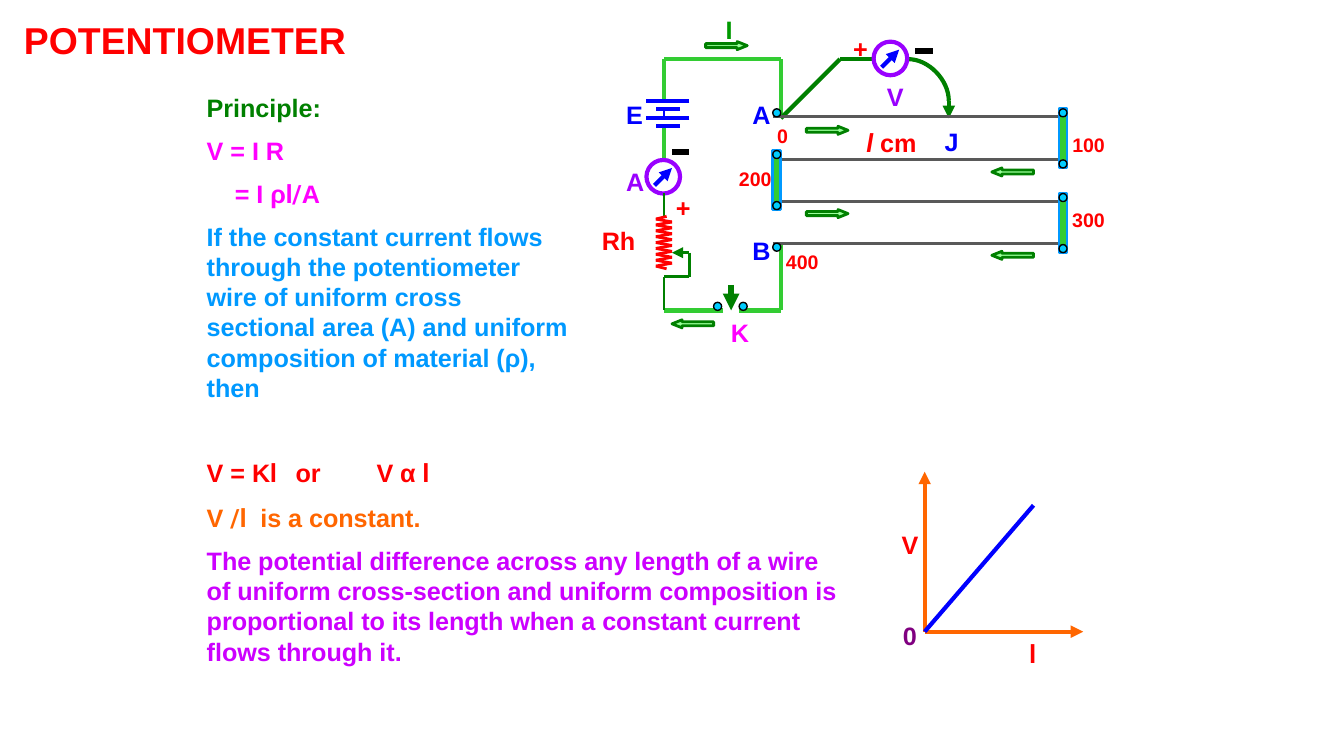
from itertools import pairwise

from lxml.etree import SubElement as Sub
from pptx import Presentation
from pptx.dml.color import RGBColor
from pptx.enum.shapes import MSO_CONNECTOR as Link, MSO_SHAPE as Geo
from pptx.enum.text import MSO_AUTO_SIZE as Fit
from pptx.oxml.ns import qn
from pptx.util import Cm, Pt

INCH = 2.54
GREEN, DARK, RED, BLUE = "33CC33", "008000", "FF0000", "0000FF"
PURPLE, PINK, SKY, ORANGE, BLACK = "9900FF", "FF00FF", "0099FF", "FF6600", "000000"
ARIAL, ROBOTO = "Arial", "Roboto"


def span(*nums):
    return [Cm(num * INCH) for num in nums]


def tint(code):
    return RGBColor.from_string(code)


def line(slide, start, end, hue, width=2.25, arrow=False, curve=False):
    kind = Link.CURVE if curve else Link.STRAIGHT
    wire = slide.shapes.add_connector(kind, *span(*start, *end))
    wire.line.color.rgb = tint(hue)
    wire.line.width = Pt(width)
    props = wire._element.spPr
    if curve:
        props.find(qn("a:prstGeom")).set("prst", "curvedConnector2")
    if arrow:
        Sub(props.find(qn("a:ln")), qn("a:tailEnd"), type="triangle")
    Sub(props, qn("a:effectLst"))


def chain(slide, points, hue, width=2.25):
    for start, end in pairwise(points):
        line(slide, start, end, hue, width)


def shape(slide, geo, box, fill, edge, width):
    item = slide.shapes.add_shape(geo, *span(*box))
    item.shadow.inherit = False
    item.fill.solid()
    item.fill.fore_color.rgb = tint(fill)
    item.line.color.rgb = tint(edge)
    item.line.width = Pt(width)
    return item


def flow(slide, x, y, geo=Geo.RIGHT_ARROW):
    item = shape(slide, geo, (x, y, 0.31, 0.06), "99FF99", DARK, 1.5)
    item.adjustments[0] = 0.5
    item.adjustments[1] = 1.25


def dot(slide, x, y):
    shape(slide, Geo.OVAL, (x, y, 0.06, 0.06), "00CCFF", BLACK, 0.75)


def meter(slide, x, y):
    shape(slide, Geo.OVAL, (x, y, 0.25, 0.25), "FFFFFF", PURPLE, 2.25)
    line(slide, (x + 0.06, y + 0.19), (x + 0.19, y + 0.06), BLUE, arrow=True)


def frame(slide, box, wrap=True):
    body = slide.shapes.add_textbox(*span(*box)).text_frame
    body.word_wrap = wrap
    body.auto_size = Fit.SHAPE_TO_FIT_TEXT
    return body


def write(body, hue, runs, size=13.5, gap=6.75, left=0, tabs=()):
    para = body.paragraphs[0]
    if para.runs:
        para = body.add_paragraph()
        para.space_before = Pt(gap)
    props = para._p.get_or_add_pPr()
    if left:
        props.set("marL", str(Cm(left)))
    if tabs:
        stops = Sub(props, qn("a:tabLst"))
        for stop in tabs:
            Sub(stops, qn("a:tab"), pos=str(Cm(stop)), algn="l")
    for text, face, *slant in runs:
        run = para.add_run()
        run.text = text
        font = run.font
        font.name, font.size, font.bold = face, Pt(size), True
        font.color.rgb = tint(hue)
        if slant:
            font.italic = True


def label(slide, text, x, y, width, hue, size=13.5, face=ARIAL, wrap=True):
    height = 0.33 if size > 12 else 0.28
    write(frame(slide, (x, y, width, height), wrap), hue, [(text, face)], size)


def supply(slide):
    chain(slide, [(5.81, 0.88), (5.81, 0.44), (4.94, 0.44), (4.94, 0.75)], GREEN)
    line(slide, (4.94, 1.19), (4.94, 0.94), GREEN)
    line(slide, (5.38, 2.31), (4.94, 2.31), GREEN)
    chain(slide, [(5.81, 1.81), (5.81, 2.31), (5.5, 2.31)], GREEN)
    flow(slide, 5.25, 0.31)
    flow(slide, 5, 2.38, Geo.LEFT_ARROW)
    label(slide, "I", 5.3, 0.06, 0.25, "009900", wrap=False)

    for y in (0.75, 0.88):
        line(slide, (5.13, y), (4.81, y), BLUE)
        line(slide, (5.06, y + 0.06), (4.88, y + 0.06), BLUE)
    line(slide, (4.94, 0.81), (4.94, 0.88), BLUE, 1.5)
    label(slide, "E", 4.56, 0.69, 0.33, BLUE)

    meter(slide, 4.81, 1.19)
    label(slide, "A", 4.56, 1.19, 0.31, PURPLE)
    line(slide, (5, 1.13), (5.13, 1.13), BLACK, 3)
    label(slide, "+", 4.93, 1.38, 0.31, RED, wrap=False)

    line(slide, (4.94, 1.44), (4.94, 1.62), DARK, 1.5)
    step = (1.98 - 1.63) / 16
    coil = [(5 if turn % 2 else 4.88, 1.63 + turn * step) for turn in range(17)]
    chain(slide, [(4.96, 1.61), *coil, (4.96, 2)], RED, 1.5)
    line(slide, (5.13, 1.88), (5, 1.88), DARK, 1.5, arrow=True)
    chain(slide, [(5.13, 1.88), (5.13, 2.06), (4.94, 2.06), (4.94, 2.31)], DARK, 1.5)
    label(slide, "Rh", 4.38, 1.63, 0.56, RED)

    line(slide, (5.44, 2.12), (5.44, 2.31), DARK, 3, arrow=True)
    for x in (5.31, 5.5):
        dot(slide, x, 2.25)
    label(slide, "K", 5.34, 2.31, 0.34, PINK, wrap=False)


def probe(slide):
    chain(slide, [(5.81, 0.88), (6.25, 0.44), (6.5, 0.44)], DARK)
    line(slide, (6.76, 0.44), (7.06, 0.75), DARK, curve=True)
    line(slide, (7.06, 0.75), (7.06, 0.88), DARK, arrow=True)
    meter(slide, 6.5, 0.31)
    label(slide, "V", 6.5, 0.56, 0.31, PURPLE)
    label(slide, "+", 6.25, 0.2, 0.25, RED)
    line(slide, (6.81, 0.38), (6.94, 0.38), BLACK, 3)
    label(slide, "J", 6.93, 0.89, 0.31, BLUE, wrap=False)
    body = frame(slide, (6.35, 0.9, 0.58, 0.33), False)
    write(body, RED, [("l", ROBOTO, True), (" cm", ARIAL)])


def wires(slide):
    for y in (0.87, 1.19, 1.5, 1.81):
        line(slide, (5.75, y), (7.94, y), "595959", 1.5)
    for x, y in ((7.88, 0.81), (7.88, 1.44), (5.75, 1.12)):
        shape(slide, Geo.RECTANGLE, (x, y, 0.06, 0.44), GREEN, SKY, 1.5)
        dot(slide, x, y)
        dot(slide, x, y + 0.38)
    for y in (0.81, 1.81):
        dot(slide, 5.75, y)
    for y in (0.94, 1.56):
        flow(slide, 6, y)
        flow(slide, 7.38, y + 0.31, Geo.LEFT_ARROW)
    for text, y in (("A", 0.69), ("B", 1.7)):
        label(slide, text, 5.5, y, 0.34, BLUE, wrap=False)
    for text, x, y, width in (
        ("0", 5.69, 0.87, 0.19), ("100", 7.88, 0.94, 0.55), ("200", 5.4, 1.19, 0.48),
        ("300", 7.88, 1.5, 0.63), ("400", 5.75, 1.81, 0.6),
    ):
        label(slide, text, x, y, width, RED, 10.5)


def graph(slide):
    zero = (6.88, 4.7)
    for end in ((6.88, 3.51), (8.06, 4.7)):
        line(slide, zero, end, ORANGE, arrow=True)
    line(slide, zero, (7.69, 3.76), BLUE)
    label(slide, "0", 6.62, 4.57, 0.25, "800080")
    label(slide, "l", 7.56, 4.7, 0.38, RED, face=ROBOTO)
    label(slide, "V", 6.61, 3.89, 0.33, RED, wrap=False)


def prose(slide):
    write(frame(slide, (0.08, 0.08, 9.81, 0.44)), RED, [("POTENTIOMETER", ARIAL)], 20)

    body = frame(slide, (1.44, 0.64, 2.94, 3.17))
    write(body, DARK, [("Principle:", ARIAL)])
    write(body, PINK, [("V = I R", ARIAL)])
    write(body, PINK, [("= I ρ", ARIAL), ("l/", ROBOTO), ("A", ARIAL)], left=0.53)
    write(body, SKY, [(
        "If the constant current flows through the potentiometer wire of uniform "
        "cross sectional area (A) and uniform composition of material (ρ), then", ARIAL)])
    write(body, RED, [("V = K", ARIAL), ("l\t", ROBOTO), ("or\tV α ", ARIAL), ("l", ROBOTO)],
          gap=29.5, tabs=(1.68, 3.21))

    body = frame(slide, (1.44, 3.69, 4.94, 1.35))
    write(body, ORANGE, [("V ", ARIAL), ("/l", ROBOTO), ("  is a constant.", ARIAL)])
    write(body, "CC00FF", [(
        "The potential difference across any length of a wire of uniform cross-section "
        "and uniform composition is proportional to its length when a constant current "
        "flows through it.", ARIAL)])


def main():
    deck = Presentation()
    deck.slide_width, deck.slide_height = span(10, 10 * 9 / 16)
    slide = deck.slides.add_slide(deck.slide_layouts[6])
    for draw in (supply, probe, prose, graph, wires):
        draw(slide)
    deck.save("out.pptx")


if __name__ == "__main__":
    main()
